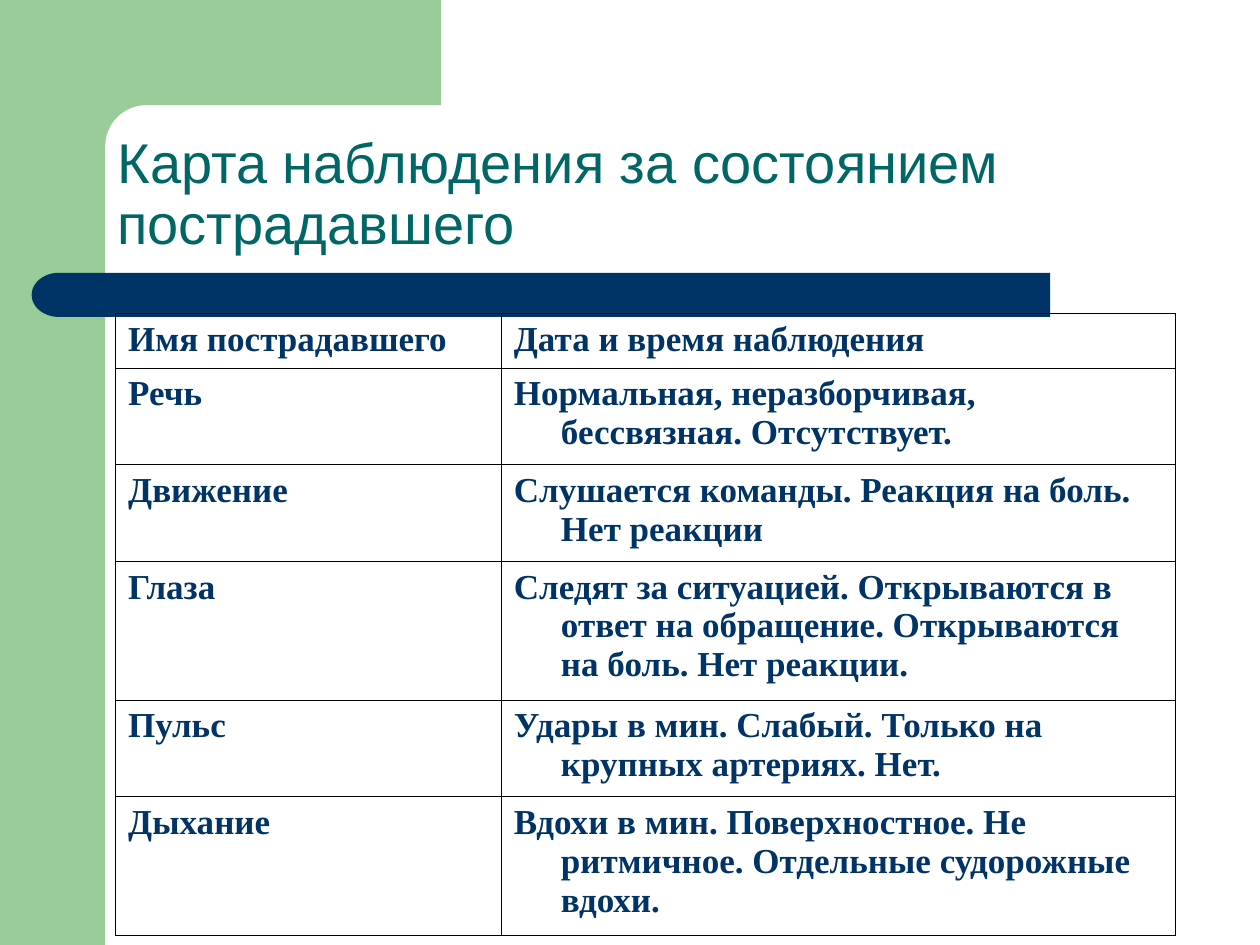
from dataclasses import dataclass
from math import cos, pi, sin

from lxml import etree
from pptx import Presentation
from pptx.dml.color import RGBColor
from pptx.enum.shapes import MSO_SHAPE
from pptx.enum.text import MSO_ANCHOR, PP_ALIGN
from pptx.oxml.ns import qn
from pptx.util import Cm, Pt

RECTANGLE = MSO_SHAPE.RECTANGLE
DELAY = MSO_SHAPE.FLOWCHART_DELAY
BOTTOM = MSO_ANCHOR.BOTTOM
LEFT = PP_ALIGN.LEFT


@dataclass(frozen=True)
class Theme:
    green: str = "99CC99"
    navy: str = "003366"
    teal: str = "006666"
    border: str = "000000"
    title_font: str = "Arial"
    table_font: str = "Times New Roman"
    title_size: int = 32
    table_size: int = 20
    border_width: float = 0.75


THEME = Theme()

PAGE_WIDTH, PAGE_HEIGHT = 25.4, 19.05
TITLE = "Карта наблюдения за состоянием пострадавшего"
OBSERVATIONS = [
    ("Имя пострадавшего", "Дата и время наблюдения"),
    ("Речь", "Нормальная, неразборчивая, бессвязная. Отсутствует."),
    ("Движение", "Слушается команды. Реакция на боль. Нет реакции"),
    ("Глаза", "Следят за ситуацией. Открываются в ответ на обращение. "
              "Открываются на боль. Нет реакции."),
    ("Пульс", "Удары в мин. Слабый. Только на крупных артериях. Нет."),
    ("Дыхание", "Вдохи в мин. Поверхностное. Не ритмичное. "
                "Отдельные судорожные вдохи."),
]
ROW_LINES = [1, 2, 2, 3, 2, 3]
COLUMN_SHARES = [0.364, 0.636]


def paint(shape, color):
    shape.shadow.inherit = False
    shape.fill.solid()
    shape.fill.fore_color.rgb = RGBColor.from_string(color)
    shape.line.fill.background()


def add_block(page, kind, box, color):
    shape = page.shapes.add_shape(kind, *map(Cm, box))
    paint(shape, color)
    return shape


def style_paragraph(para, font_name, size, color, bold=False):
    para.alignment = LEFT
    para.font.name = font_name
    para.font.size = Pt(size)
    para.font.bold = bold
    para.font.color.rgb = RGBColor.from_string(color)


def add_frame(page, box, band, radius):
    """Green side band and top block joined by a rounded inner corner."""
    left, top, width, height = box
    add_block(page, RECTANGLE, (left, top, band, height), THEME.green)

    right, inner_x, inner_y = left + width, left + band, top + band
    steps = 12
    corner = [(inner_x + radius * (1 - sin(i * pi / 2 / steps)),
               inner_y + radius * (1 - cos(i * pi / 2 / steps)))
              for i in range(steps + 1)]
    middle = left + band * 0.6
    points = [(right, top), (right, inner_y), *corner,
              (middle, inner_y + radius), (middle, top)]
    points = [(Cm(x), Cm(y)) for x, y in points]
    builder = page.shapes.build_freeform(*points[0], scale=1.0)
    builder.add_line_segments(points[1:], close=True)
    paint(builder.convert_to_shape(), THEME.green)


def add_rule(page, box, cap):
    """Navy bar with a rounded left end."""
    left, top, width, height = box
    add_block(page, RECTANGLE, (left + cap, top, width - cap, height), THEME.navy)
    end = add_block(page, DELAY, (left, top, cap + 0.02, height), THEME.navy)
    end._element.spPr.find(qn("a:xfrm")).set("flipH", "1")


def add_title(page, box, text):
    frame = page.shapes.add_textbox(*map(Cm, box)).text_frame
    frame.word_wrap = True
    frame.vertical_anchor = BOTTOM
    para = frame.paragraphs[0]
    para.text = text
    para.line_spacing = 0.9
    style_paragraph(para, THEME.title_font, THEME.title_size, THEME.teal)


def set_borders(cell):
    properties = cell._tc.get_or_add_tcPr()
    for index, side in enumerate(("lnL", "lnR", "lnT", "lnB")):
        line = etree.Element(qn(f"a:{side}"), w=str(Pt(THEME.border_width)))
        fill = etree.SubElement(line, qn("a:solidFill"))
        etree.SubElement(fill, qn("a:srgbClr"), val=THEME.border)
        properties.insert(index, line)


def fill_cell(cell, text):
    cell.fill.background()
    set_borders(cell)
    para = cell.text_frame.paragraphs[0]
    para.text = text
    style_paragraph(para, THEME.table_font, THEME.table_size, THEME.navy, bold=True)
    # Hanging indent
    indent = Cm(0.95)
    properties = para._p.get_or_add_pPr()
    properties.set("marL", str(indent))
    properties.set("indent", str(-indent))


def add_observations(page, box, rows):
    """Two-column table whose row heights follow the number of lines."""
    width = box[2]
    table = page.shapes.add_table(len(rows), len(COLUMN_SHARES), *map(Cm, box)).table
    table.first_row = False
    table.horz_banding = False
    for column, share in zip(table.columns, COLUMN_SHARES):
        column.width = Cm(width * share)
    for row, lines, texts in zip(table.rows, ROW_LINES, rows):
        row.height = Cm(0.27 + 0.78 * lines)
        for cell, text in zip(row.cells, texts):
            fill_cell(cell, text)


def main():
    deck = Presentation()
    deck.slide_width, deck.slide_height = Cm(PAGE_WIDTH), Cm(PAGE_HEIGHT)
    page = deck.slides.add_slide(deck.slide_layouts[6])

    # Background decoration
    add_frame(page, (0, 0, 8.89, PAGE_HEIGHT), band=2.12, radius=0.83)
    add_rule(page, (0.64, 5.5, 20.53, 0.89), cap=1.07)

    # Content
    add_title(page, (2.12, 2.12, 22.01, 3.17), TITLE)
    add_observations(page, (2.33, 6.32, 21.36, 11.76), OBSERVATIONS)

    deck.save("out.pptx")


if __name__ == "__main__":
    main()
